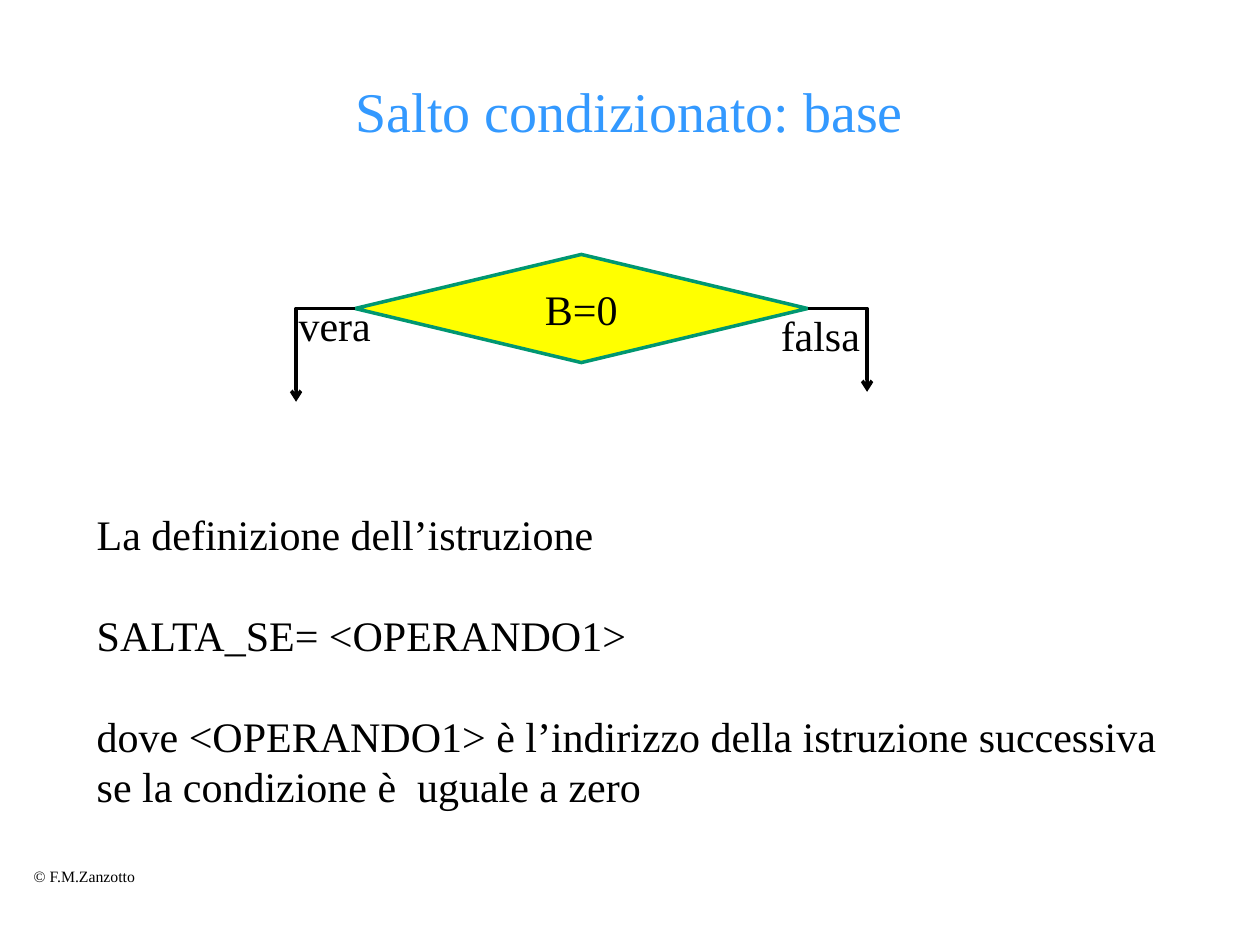
from dataclasses import dataclass

from lxml import etree
from pptx import Presentation
from pptx import util as u
from pptx.dml.color import RGBColor
from pptx.enum import shapes, text
from pptx.oxml.ns import qn

FONT = "Times New Roman"
BLACK = "000000"
GAP = 28.8  # one empty line of body text, in points


@dataclass
class Label:
    lines: list[str]
    left: float
    top: float
    width: float
    height: float
    size: int = 24
    wrap: bool = False


@dataclass
class Branch:
    site: int
    start: float
    end: float
    drop: float


LABELS = [
    Label(["© F.M.Zanzotto"], 0.43, 17.35, 2.59, 0.64, size=9),
    Label(["vera"], 5.77, 5.92, 1.98, 1.27),
    Label(["falsa"], 15.49, 6.12, 2.13, 1.27),
    Label(
        [
            "La definizione dell’istruzione",
            "SALTA_SE= <OPERANDO1>",
            "dove <OPERANDO1> è l’indirizzo della istruzione successiva "
            "se la condizione è  uguale a zero",
        ],
        1.7, 10.13, 22.4, 6.4, wrap=True,
    ),
]
MID = 6.22  # height of the side corners of the diamond
BRANCHES = [Branch(1, 7.16, 5.97, 1.88), Branch(3, 16.28, 17.48, 1.68)]


def tint(code: str) -> RGBColor:
    return RGBColor.from_string(code)


def style(par, size: int, code: str = BLACK, align=text.PP_ALIGN.LEFT) -> None:
    par.alignment = align
    par.font.name = FONT
    par.font.size = u.Pt(size)
    par.font.color.rgb = tint(code)


def add_title(slide, words: str) -> None:
    title = slide.shapes.title
    title.left, title.top = u.Cm(1.9), u.Cm(1.27)
    title.width, title.height = u.Cm(21.59), u.Cm(1.9)
    frame = title.text_frame
    frame.text = words
    frame.vertical_anchor = text.MSO_ANCHOR.MIDDLE
    style(frame.paragraphs[0], 32, "3399FF", text.PP_ALIGN.CENTER)


def add_label(slide, label: Label) -> None:
    box = slide.shapes.add_textbox(
        u.Cm(label.left), u.Cm(label.top), u.Cm(label.width), u.Cm(label.height)
    )
    frame = box.text_frame
    frame.word_wrap = label.wrap
    frame.text = "\n".join(label.lines)
    for i, par in enumerate(frame.paragraphs):
        style(par, label.size)
        if i:
            par.space_before = u.Pt(GAP)


def add_test(slide, words: str):
    """Draw the diamond that holds the condition."""
    test = slide.shapes.add_shape(
        shapes.MSO_SHAPE.DIAMOND, u.Cm(7.16), u.Cm(5.13), u.Cm(9.12), u.Cm(2.18)
    )
    test.shadow.inherit = False
    test.fill.solid()
    test.fill.fore_color.rgb = tint("FFFF00")
    test.line.color.rgb = tint("009771")
    test.line.width = u.Pt(2)
    frame = test.text_frame
    frame.text = words
    frame.vertical_anchor = text.MSO_ANCHOR.MIDDLE
    style(frame.paragraphs[0], 24, align=text.PP_ALIGN.CENTER)
    return test


def add_branch(slide, test, branch: Branch) -> None:
    """Draw an arrow that leaves the diamond sideways and turns down once."""
    arrow = slide.shapes.add_connector(
        shapes.MSO_CONNECTOR.ELBOW,
        u.Cm(branch.start), u.Cm(MID), u.Cm(branch.end), u.Cm(MID + branch.drop),
    )
    arrow.begin_connect(test, branch.site)
    arrow.line.color.rgb = tint(BLACK)
    arrow.line.width = u.Pt(2)
    props = arrow._element.spPr
    props.find(qn("a:prstGeom")).set("prst", "bentConnector2")
    etree.SubElement(props.find(qn("a:ln")), qn("a:tailEnd"), type="arrow")
    etree.SubElement(props, qn("a:effectLst"))


def main() -> None:
    deck = Presentation()
    deck.slide_width, deck.slide_height = u.Cm(25.4), u.Cm(19.05)
    slide = deck.slides.add_slide(deck.slide_layouts[5])
    add_title(slide, "Salto condizionato: base")
    test = add_test(slide, "B=0")
    for branch in BRANCHES:
        add_branch(slide, test, branch)
    for label in LABELS:
        add_label(slide, label)
    deck.save("out.pptx")


if __name__ == "__main__":
    main()
